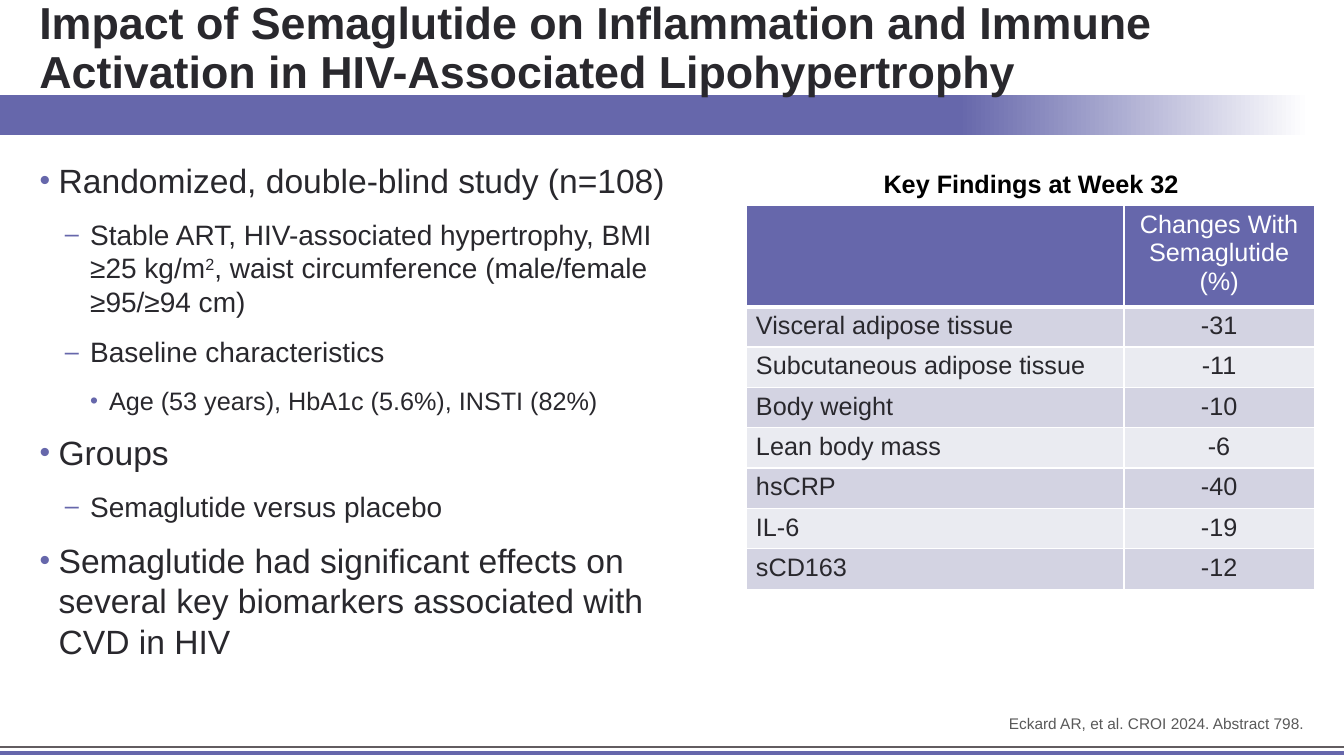
from lxml.etree import SubElement
from pptx import Presentation
from pptx.dml.color import RGBColor as Color
from pptx.enum.shapes import MSO_CONNECTOR as Connector, MSO_SHAPE as Shape
from pptx.enum.text import MSO_ANCHOR as Anchor, PP_ALIGN as Align
from pptx.oxml.ns import qn
from pptx.util import Pt

COLORS = {"purple": "6667AB", "ink": "29282D", "gray": "595959", "rule": "625C60",
          "lavender": "D3D3E2", "pale": "EAEBF1", "white": "FFFFFF", "black": "000000"}

# Per outline level: bullet, left indent, hanging indent, text size
LEVELS = [("•", 13.5, 13.5, 24), ("–", 36, 18, 20), ("•", 49.5, 13.5, 18)]

OUTLINE = [
    (0, "Randomized, double-blind study (n=108)"),
    (1, "Stable ART, HIV-associated hypertrophy, BMI ≥25 kg/m", "2",
     ", waist circumference (male/female ≥95/≥94 cm)"),
    (1, "Baseline characteristics"),
    (2, "Age (53 years), HbA1c (5.6%), INSTI (82%)"),
    (0, "Groups"),
    (1, "Semaglutide versus placebo"),
    (0, "Semaglutide had significant effects on several key biomarkers "
        "associated with CVD in HIV"),
]

FINDINGS = [
    ("", "Changes With Semaglutide (%)"),
    ("Visceral adipose tissue", "-31"),
    ("Subcutaneous adipose tissue", "-11"),
    ("Body weight", "-10"),
    ("Lean body mass", "-6"),
    ("hsCRP", "-40"),
    ("IL-6", "-19"),
    ("sCD163", "-12"),
]


def color(name):
    return Color.from_string(COLORS[name])


def write(paragraph, text, size=18, ink="ink", bold=False, align=None, spacing=None,
          superscript=False):
    run = paragraph.add_run()
    run.text = text
    run.font.name = "Arial"
    run.font.size = Pt(size)
    run.font.bold = bold
    run.font.color.rgb = color(ink)
    if superscript:
        run._r.get_or_add_rPr().set("baseline", "30000")
    if align is not None:
        paragraph.alignment = align
    if spacing is not None:
        paragraph.line_spacing = spacing


class SlideBuilder:
    def __init__(self, slide, accent="purple"):
        self.slide = slide
        self.accent = accent

    def fading_band(self, left, top, width, height):
        band = self.slide.shapes.add_shape(Shape.RECTANGLE, Pt(left), Pt(top),
                                           Pt(width), Pt(height))
        band.shadow.inherit = False
        band.line.fill.background()
        band.fill.gradient()
        band.fill.gradient_angle = 180
        stops = ((0.03, "white"), (0.29, self.accent))
        for stop, (position, name) in zip(band.fill.gradient_stops, stops):
            stop.position = position
            stop.color.rgb = color(name)

    def rule(self, left, right, y, name, weight):
        line = self.slide.shapes.add_connector(Connector.STRAIGHT, Pt(left), Pt(y),
                                               Pt(right), Pt(y))
        line.line.color.rgb = color(name)
        line.line.width = Pt(weight)
        SubElement(line._element.spPr, qn("a:effectLst"))

    def text_box(self, left, top, width, height, anchor=Anchor.TOP):
        box = self.slide.shapes.add_textbox(Pt(left), Pt(top), Pt(width), Pt(height))
        frame = box.text_frame
        frame.word_wrap = True
        frame.vertical_anchor = anchor
        return frame

    def label(self, text, left, top, width, height, anchor=Anchor.TOP, **style):
        frame = self.text_box(left, top, width, height, anchor)
        write(frame.paragraphs[0], text, **style)

    def bullet(self, paragraph, level):
        mark, indent, hanging, _ = LEVELS[level]
        paragraph.level = level
        paragraph.space_before = Pt(12)
        properties = paragraph._p.get_or_add_pPr()
        properties.set("marL", str(Pt(indent)))
        properties.set("indent", str(-Pt(hanging)))
        tint = SubElement(properties, qn("a:buClr"))
        SubElement(tint, qn("a:srgbClr"), val=COLORS[self.accent])
        SubElement(properties, qn("a:buSzPct"), val="90000")
        SubElement(properties, qn("a:buFont"), typeface="Arial")
        SubElement(properties, qn("a:buChar"), char=mark)

    def outline(self, items, left, top, width, height):
        frame = self.text_box(left, top, width, height)
        for index, (level, *parts) in enumerate(items):
            paragraph = frame.add_paragraph() if index else frame.paragraphs[0]
            self.bullet(paragraph, level)
            for position, part in enumerate(parts):
                # Every second part is raised
                write(paragraph, part, size=LEVELS[level][3], superscript=position % 2 == 1)

    def cell_borders(self, cell, top, bottom):
        properties = cell._tc.get_or_add_tcPr()
        sides = (("lnL", 1), ("lnR", 1), ("lnT", top), ("lnB", bottom))
        for index, (side, weight) in enumerate(sides):
            line = SubElement(properties, qn("a:" + side), w=str(Pt(weight)))
            fill = SubElement(line, qn("a:solidFill"))
            SubElement(fill, qn("a:srgbClr"), val=COLORS["white"])
            properties.insert(index, line)  # borders come before the fill

    def table(self, rows, left, top, widths, header_height, row_height):
        height = header_height + row_height * (len(rows) - 1)
        table = self.slide.shapes.add_table(len(rows), len(widths), Pt(left), Pt(top),
                                            Pt(sum(widths)), Pt(height)).table
        for column, width in zip(table.columns, widths):
            column.width = Pt(width)
        for r, row in enumerate(rows):
            table.rows[r].height = Pt(row_height if r else header_height)
            fill = ("pale", "lavender")[r % 2] if r else self.accent
            for c, text in enumerate(row):
                cell = table.cell(r, c)
                cell.fill.solid()
                cell.fill.fore_color.rgb = color(fill)
                self.cell_borders(cell, top=3 if r == 1 else 1, bottom=1 if r else 3)
                if text:
                    write(cell.text_frame.paragraphs[0], text, ink="ink" if r else "white",
                          align=Align.CENTER if c else Align.LEFT)


def main():
    presentation = Presentation()
    presentation.slide_width, presentation.slide_height = Pt(960), Pt(540)
    slide = presentation.slides.add_slide(presentation.slide_layouts[6])
    builder = SlideBuilder(slide)

    # Header band and footer rules
    builder.fading_band(-0.7, 68, 964.8, 28.8)
    builder.rule(-0.7, 960.5, 533.5, "rule", 1.75)
    builder.rule(-0.7, 960.5, 537.8, "purple", 3.25)

    # Title
    builder.label("Impact of Semaglutide on Inflammation and Immune Activation in "
                  "HIV-Associated Lipohypertrophy", 21, 0, 923, 73.4,
                  anchor=Anchor.BOTTOM, size=32, bold=True, spacing=0.9)

    # Study outline
    builder.outline(OUTLINE, 21.3, 110.9, 467.3, 381.6)

    # Source
    builder.label("Eckard AR, et al. CROI 2024. Abstract 798.", 480.2, 508.3, 458.6, 19.4,
                  size=11, ink="gray", align=Align.RIGHT, spacing=0.9)

    # Findings table and its caption
    builder.table(FINDINGS, 532.8, 147, (270, 136), 71.5, 28.8)
    builder.label("Key Findings at Week 32", 534.2, 120.2, 404.6, 25.9,
                  ink="black", bold=True, align=Align.CENTER, spacing=0.85)

    presentation.save("out.pptx")


if __name__ == "__main__":
    main()
